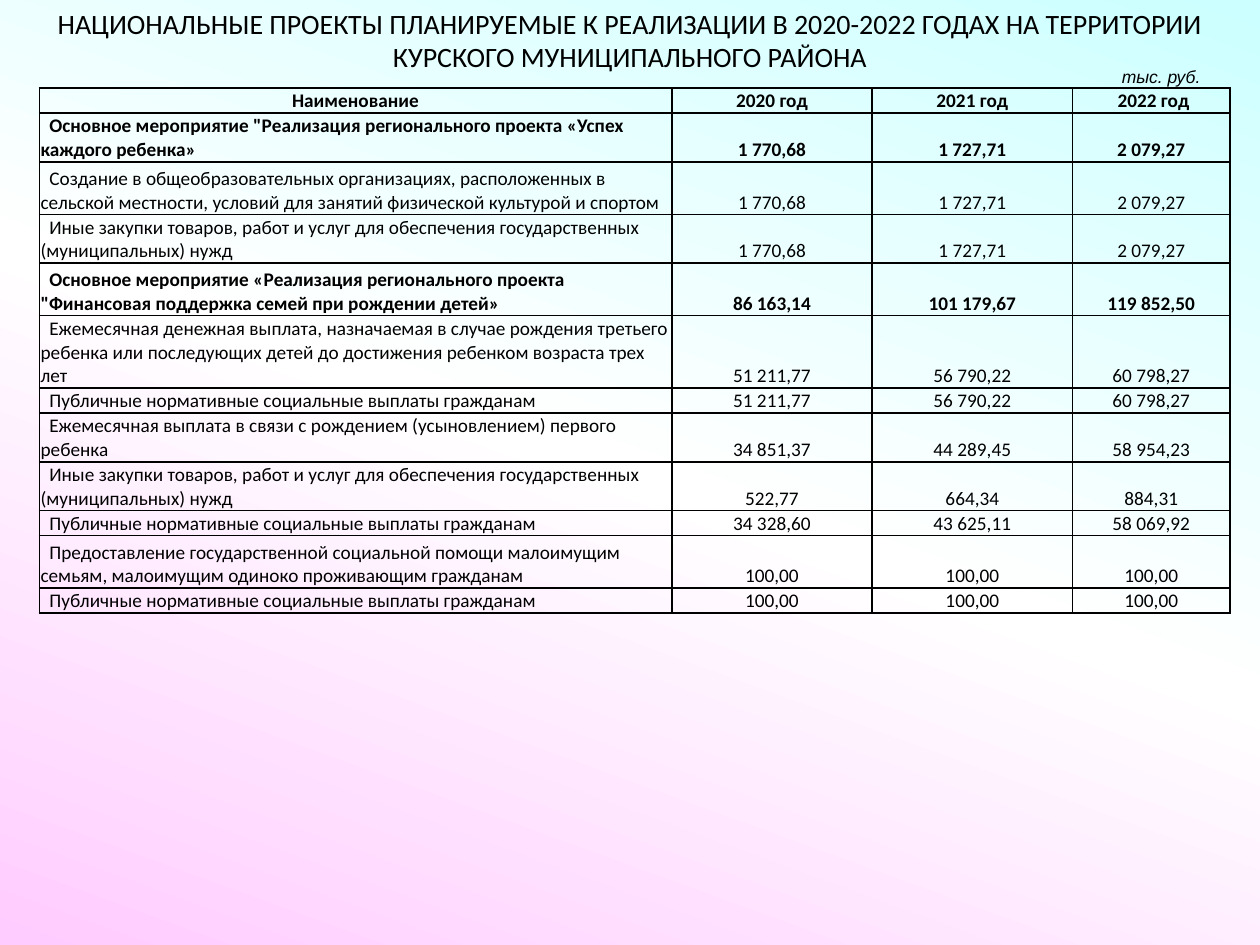
from dataclasses import dataclass

from lxml.etree import SubElement
from pptx import Presentation
from pptx.dml.color import RGBColor
from pptx.enum.text import MSO_ANCHOR, PP_ALIGN
from pptx.oxml.ns import qn
from pptx.slide import Slide
from pptx.table import _Cell
from pptx.text.text import _Paragraph
from pptx.util import Pt

COLORS = {
    "text": "000000",
    "border": "000000",
    "sky": "CCFFFF",
    "middle": "FFFFFF",
    "pink": "FFCCFF",
}
ONE_LINE, TWO_LINES, TWO_LINES_TALL, THREE_LINES = 13.6, 26.8, 30, 40
COLUMN_WIDTHS = (361.4, 114.5, 114.5, 90)
FIRST_LINE_INDENT = 5


@dataclass(frozen=True)
class TextStyle:
    size: float
    font: str = "Calibri"
    bold: bool = False
    italic: bool = False


@dataclass(frozen=True)
class Expense:
    name: str
    amounts: tuple[str, str, str]
    height: float
    bold: bool = False


PAYMENTS = "Публичные нормативные социальные выплаты гражданам"
PURCHASES = ("Иные закупки товаров, работ и услуг для обеспечения "
             "государственных (муниципальных) нужд")
SPORT_AMOUNTS = ("1 770,68", "1 727,71", "2 079,27")
THIRD_CHILD_AMOUNTS = ("51 211,77", "56 790,22", "60 798,27")
AID_AMOUNTS = ("100,00",) * 3

HEADER = Expense("Наименование", ("2020 год", "2021 год", " 2022 год"), ONE_LINE, True)
EXPENSES = [
    Expense('Основное мероприятие "Реализация регионального проекта '
            "«Успех каждого ребенка»", SPORT_AMOUNTS, TWO_LINES, True),
    Expense("Создание в общеобразовательных организациях, расположенных в сельской "
            "местности, условий для занятий физической культурой и спортом",
            SPORT_AMOUNTS, TWO_LINES_TALL),
    Expense(PURCHASES, SPORT_AMOUNTS, TWO_LINES),
    Expense("Основное мероприятие «Реализация регионального проекта "
            '"Финансовая поддержка семей при рождении детей»',
            ("86 163,14", "101 179,67", "119 852,50"), TWO_LINES_TALL, True),
    Expense("Ежемесячная денежная выплата, назначаемая в случае рождения третьего "
            "ребенка или последующих детей до достижения ребенком возраста трех лет",
            THIRD_CHILD_AMOUNTS, THREE_LINES),
    Expense(PAYMENTS, THIRD_CHILD_AMOUNTS, ONE_LINE),
    Expense("Ежемесячная выплата в связи с рождением (усыновлением) первого ребенка",
            ("34 851,37", "44 289,45", "58 954,23"), TWO_LINES),
    Expense(PURCHASES, ("522,77", "664,34", "884,31"), TWO_LINES),
    Expense(PAYMENTS, ("34 328,60", "43 625,11", "58 069,92"), ONE_LINE),
    Expense("Предоставление государственной социальной помощи малоимущим семьям, "
            "малоимущим одиноко проживающим гражданам", AID_AMOUNTS, TWO_LINES_TALL),
    Expense(PAYMENTS, AID_AMOUNTS, ONE_LINE),
]


def write(paragraph: _Paragraph, text: str, style: TextStyle,
          align: PP_ALIGN = PP_ALIGN.CENTER) -> None:
    paragraph.alignment = align
    run = paragraph.add_run()
    run.text = text
    run.font.size = Pt(style.size)
    run.font.name = style.font
    run.font.bold = style.bold
    run.font.italic = style.italic
    run.font.color.rgb = RGBColor.from_string(COLORS["text"])


def paint_background(slide: Slide) -> None:
    fill = slide.background.fill
    fill.gradient()
    fill.gradient_angle = 250  # counter-clockwise
    stops = next(slide.element.iter(qn("a:gsLst")))
    for stop in list(stops):
        stops.remove(stop)
    for percent, color in ((0, "sky"), (50, "middle"), (100, "pink")):
        stop = SubElement(stops, qn("a:gs"), pos=str(percent * 1000))
        SubElement(stop, qn("a:srgbClr"), val=COLORS[color])


def add_label(slide: Slide, left: float, top: float, width: float, height: float,
              text: str, style: TextStyle) -> None:
    box = slide.shapes.add_textbox(Pt(left), Pt(top), Pt(width), Pt(height))
    box.text_frame.word_wrap = True
    write(box.text_frame.paragraphs[0], text, style)


def format_cell(cell: _Cell) -> None:
    cell.vertical_anchor = MSO_ANCHOR.BOTTOM
    cell.margin_left = cell.margin_right = cell.margin_top = Pt(0.7)
    cell.margin_bottom = Pt(0)
    properties = cell._tc.get_or_add_tcPr()
    for side in ("lnL", "lnR", "lnT", "lnB"):
        line = SubElement(properties, qn(f"a:{side}"), w=str(Pt(1)))
        fill = SubElement(line, qn("a:solidFill"))
        SubElement(fill, qn("a:srgbClr"), val=COLORS["border"])
    cell.fill.background()


def add_expense_table(slide: Slide, left: float, top: float) -> None:
    rows = [HEADER, *EXPENSES]
    table = slide.shapes.add_table(
        len(rows), len(COLUMN_WIDTHS), Pt(left), Pt(top),
        Pt(sum(COLUMN_WIDTHS)), Pt(sum(row.height for row in rows))).table
    table.first_row = table.horz_banding = False
    for column, width in zip(table.columns, COLUMN_WIDTHS):
        column.width = Pt(width)
    for row_index, expense in enumerate(rows):
        table.rows[row_index].height = Pt(expense.height)
        style = TextStyle(11, bold=expense.bold)
        for column_index, text in enumerate((expense.name, *expense.amounts)):
            cell = table.cell(row_index, column_index)
            format_cell(cell)
            paragraph = cell.text_frame.paragraphs[0]
            is_name = column_index == 0 and expense is not HEADER
            write(paragraph, text, style, PP_ALIGN.LEFT if is_name else PP_ALIGN.CENTER)
            if is_name:
                paragraph._p.get_or_add_pPr().set("indent", str(Pt(FIRST_LINE_INDENT)))


def main() -> None:
    presentation = Presentation()
    presentation.slide_width, presentation.slide_height = Pt(720), Pt(540)
    slide = presentation.slides.add_slide(presentation.slide_layouts[6])
    paint_background(slide)

    # Projects and their yearly amounts
    add_expense_table(slide, 22.5, 50.4)

    # Title and unit of measure
    add_label(slide, 0, 0, 720, 46,
              "НАЦИОНАЛЬНЫЕ ПРОЕКТЫ ПЛАНИРУЕМЫЕ К РЕАЛИЗАЦИИ В 2020-2022 ГОДАХ "
              "НА ТЕРРИТОРИИ КУРСКОГО МУНИЦИПАЛЬНОГО РАЙОНА", TextStyle(16))
    add_label(slide, 607, 34, 113, 19.4, "тыс. руб.",
              TextStyle(10, font="Arial", italic=True))

    presentation.save("out.pptx")


if __name__ == "__main__":
    main()
